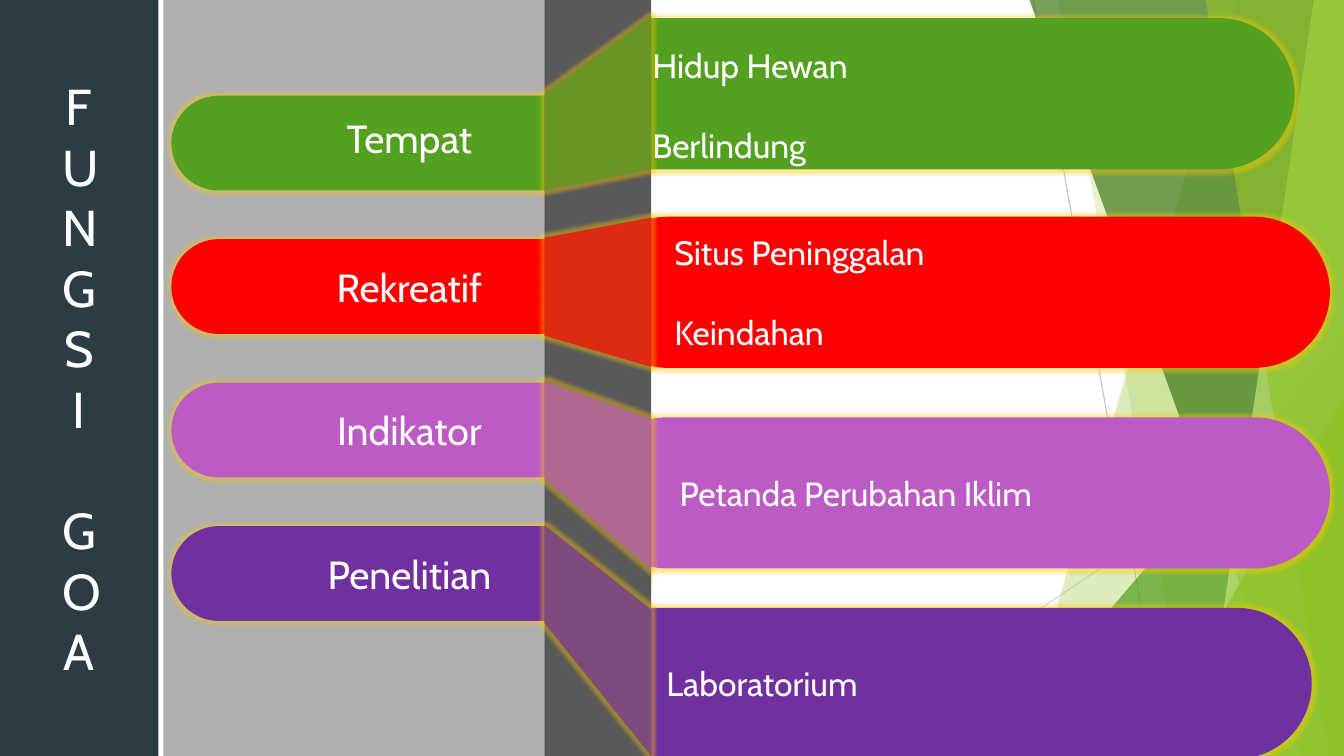
"""Build the slide on the functions of a cave."""
from dataclasses import dataclass

from pptx import Presentation
from pptx.dml.color import RGBColor
from pptx.enum.shapes import MSO_CONNECTOR as Conn, MSO_SHAPE as Shp
from pptx.enum.text import MSO_ANCHOR as Anchor, MSO_AUTO_SIZE as Auto, PP_ALIGN as Align
from pptx.oxml.ns import qn
from pptx.util import Inches, Pt
from lxml.etree import SubElement

Point = tuple[float, float]
Box = tuple[float, float, float, float]


@dataclass(frozen=True)
class Theme:
    """Colours, type sizes and effects of the slide."""
    font: str = "Cabin"
    title_size: int = 36
    title_gap: float = 43.6
    category_size: int = 28
    detail_size: int = 24
    detail_gap: float = 28.5
    text: str = "FFFFFF"
    title_bar: str = "2C3C43"
    panel: str = "B0B0B0"
    strip: str = "595959"
    glow: str = "FFC800"
    glow_radius: int = 5
    glow_alpha: int = 40
    lime: str = "90C226"
    green: str = "54A021"
    forest: str = "3F7819"
    pale: str = "C0E474"
    red: str = "FF0000"
    orchid: str = "BC5BC4"
    purple: str = "7030A0"


@dataclass(frozen=True)
class Facet:
    """A translucent background band, given by its left edge's ends."""
    top: Point
    bottom: Point
    color: str
    alpha: int
    triangle: bool = False


@dataclass(frozen=True)
class Function:
    """One function of the cave: its category pill, link and detail pill."""
    category: str
    details: tuple[str, ...]
    color: str
    left: float
    top: float
    indent: float
    link: tuple[float, float, float, float]
    alpha: int
    anchor: Anchor = Anchor.MIDDLE


T = Theme()
W, H = 13.33, 7.5
TITLE_W, LETTER_W = 1.57, 0.34
STRIP_LEFT, STRIP_W = 5.4, 1.06
CATEGORY_TOP, CATEGORY_PITCH = 0.95, 1.4233

RAYS = (((10.25, 0), (11.58, H), "BFBFBF"), ((W, 4.03), (8.12, H), "D9D9D9"))
FACETS = (
    Facet((12.28, 0), (10.04, H), T.lime, 30),
    Facet((10.5, 0), (11.83, H), T.lime, 20),
    Facet((W, 3.33), (9.77, H), T.green, 72, True),
    Facet((10.21, 0), (12.91, H), T.forest, 70),
    Facet((13.03, 0), (11.92, H), T.pale, 70),
    Facet((11.96, 0), (13.18, H), T.lime, 65),
    Facet((W, 3.93), (11.34, H), T.lime, 80, True),
)
FUNCTIONS = (
    Function("Tempat", ("Hidup Hewan", "Berlindung"), T.green, 5.52, 0.18, 0.63,
             (0.93, 0.16, 1.68, 1.89), 66, Anchor.TOP),
    Function("Rekreatif", ("Situs Peninggalan", "Keindahan"), T.red, 5.87, 2.15, 0.5,
             (2.36, 2.16, 3.64, 3.33), 68),
    Function("Indikator", ("Petanda Perubahan Iklim",), T.orchid, 5.87, 4.14, 0.55,
             (3.78, 4.16, 5.65, 4.75), 64),
    Function("Penelitian", ("Laboratorium",), T.purple, 5.69, 6.03, 0.6,
             (5.21, 6.05, 7.5, 6.18), 67),
)


def paint(sp, color: str, alpha: int = 100) -> None:
    """Give a shape a flat fill without outline or shadow."""
    sp.fill.solid()
    sp.fill.fore_color.rgb = RGBColor.from_string(color)
    sp.line.fill.background()
    sp.shadow.inherit = False
    if alpha < 100:
        clr = sp.element.spPr.find(qn("a:solidFill")).find(qn("a:srgbClr"))
        SubElement(clr, qn("a:alpha"), val=str(alpha * 1000))


def add_glow(sp) -> None:
    """Surround a painted shape with the theme's glow."""
    effects = sp.element.spPr.find(qn("a:effectLst"))
    glow = SubElement(effects, qn("a:glow"), rad=str(Pt(T.glow_radius)))
    clr = SubElement(glow, qn("a:srgbClr"), val=T.glow)
    SubElement(clr, qn("a:alpha"), val=str(T.glow_alpha * 1000))


def add_preset(slide, kind: Shp, box: Box, color: str, adj: float | None = None, alpha: int = 100):
    """Add a painted preset shape."""
    sp = slide.shapes.add_shape(kind, *map(Inches, box))
    if adj is not None:
        sp.adjustments[0] = adj
    paint(sp, color, alpha)
    return sp


def add_polygon(slide, points: list[Point], color: str, alpha: int):
    """Add a painted closed polygon."""
    start, *rest = [(Inches(x), Inches(y)) for x, y in points]
    builder = slide.shapes.build_freeform(*start)
    builder.add_line_segments(rest, close=True)
    sp = builder.convert_to_shape()
    paint(sp, color, alpha)
    return sp


def write(sp, lines: tuple[str, ...], size: int, align: Align, anchor: Anchor,
          gap: float = 0) -> None:
    """Set a shape's paragraphs and format them."""
    tf = sp.text_frame
    tf.text = "\n".join(lines)
    tf.word_wrap = True
    tf.vertical_anchor = anchor
    for i, p in enumerate(tf.paragraphs):
        p.alignment = align
        p.space_before = Pt(gap if i else 0)
        for r in p.runs:
            r.font.name = T.font
            r.font.size = Pt(size)
            r.font.color.rgb = RGBColor.from_string(T.text)


def add_background(slide) -> None:
    """Draw the rays and the green facets at the right."""
    for start, end, color in RAYS:
        ray = slide.shapes.add_connector(Conn.STRAIGHT, *map(Inches, start + end))
        ray.line.color.rgb = RGBColor.from_string(color)
        ray.line.width = Pt(0.75)
        SubElement(ray.element.spPr, qn("a:effectLst"))
    for f in FACETS:
        if f.triangle:
            left, top = f.bottom[0], f.top[1]
            add_preset(slide, Shp.ISOSCELES_TRIANGLE, (left, top, W - left, H - top),
                       f.color, 1, f.alpha)
        else:
            add_polygon(slide, [f.top, (W, 0), (W, H), f.bottom], f.color, f.alpha)


def add_title(slide) -> None:
    """Turn the title placeholder into a bar one letter wide inside."""
    sp = slide.shapes.title
    sp.left, sp.top, sp.width, sp.height = map(Inches, (0, 0, TITLE_W, H))
    sp.fill.solid()
    sp.fill.fore_color.rgb = RGBColor.from_string(T.title_bar)
    write(sp, ("FUNGSI", "GOA"), T.title_size, Align.CENTER, Anchor.MIDDLE, T.title_gap)
    tf = sp.text_frame
    tf.auto_size = Auto.NONE
    tf.margin_left = tf.margin_right = Inches((TITLE_W - LETTER_W) / 2)


def add_pill(slide, box: Box, color: str):
    """Add a glowing pill."""
    sp = add_preset(slide, Shp.ROUNDED_RECTANGLE, box, color, 0.5)
    add_glow(sp)
    return sp


def add_functions(slide) -> None:
    """Draw the category and detail pills, then the strip and its links."""
    for i, f in enumerate(FUNCTIONS):
        sp = add_pill(slide, (1.7, CATEGORY_TOP + i * CATEGORY_PITCH, 4.72, 0.94), f.color)
        write(sp, (f.category,), T.category_size, Align.CENTER, f.anchor)
    for f in FUNCTIONS:
        sp = add_pill(slide, (f.left, f.top, 7.32, 1.5), f.color)
        write(sp, f.details, T.detail_size, Align.LEFT, f.anchor, T.detail_gap)
        sp.text_frame.margin_left = Inches(0.1 + f.indent)
    add_preset(slide, Shp.RECTANGLE, (STRIP_LEFT, 0, STRIP_W, H), T.strip)
    right = STRIP_LEFT + STRIP_W
    for f in FUNCTIONS:
        points = list(zip((STRIP_LEFT, right, right, STRIP_LEFT), f.link))
        add_glow(add_polygon(slide, points, f.color, f.alpha))


def main() -> None:
    """Build and save the presentation."""
    prs = Presentation()
    prs.slide_width, prs.slide_height = Inches(W), Inches(H)
    slide = prs.slides.add_slide(prs.slide_layouts[5])
    add_background(slide)
    add_title(slide)
    add_preset(slide, Shp.RECTANGLE, (1.62, 0, 3.78, H), T.panel)
    add_functions(slide)
    prs.save("out.pptx")


if __name__ == "__main__":
    main()
